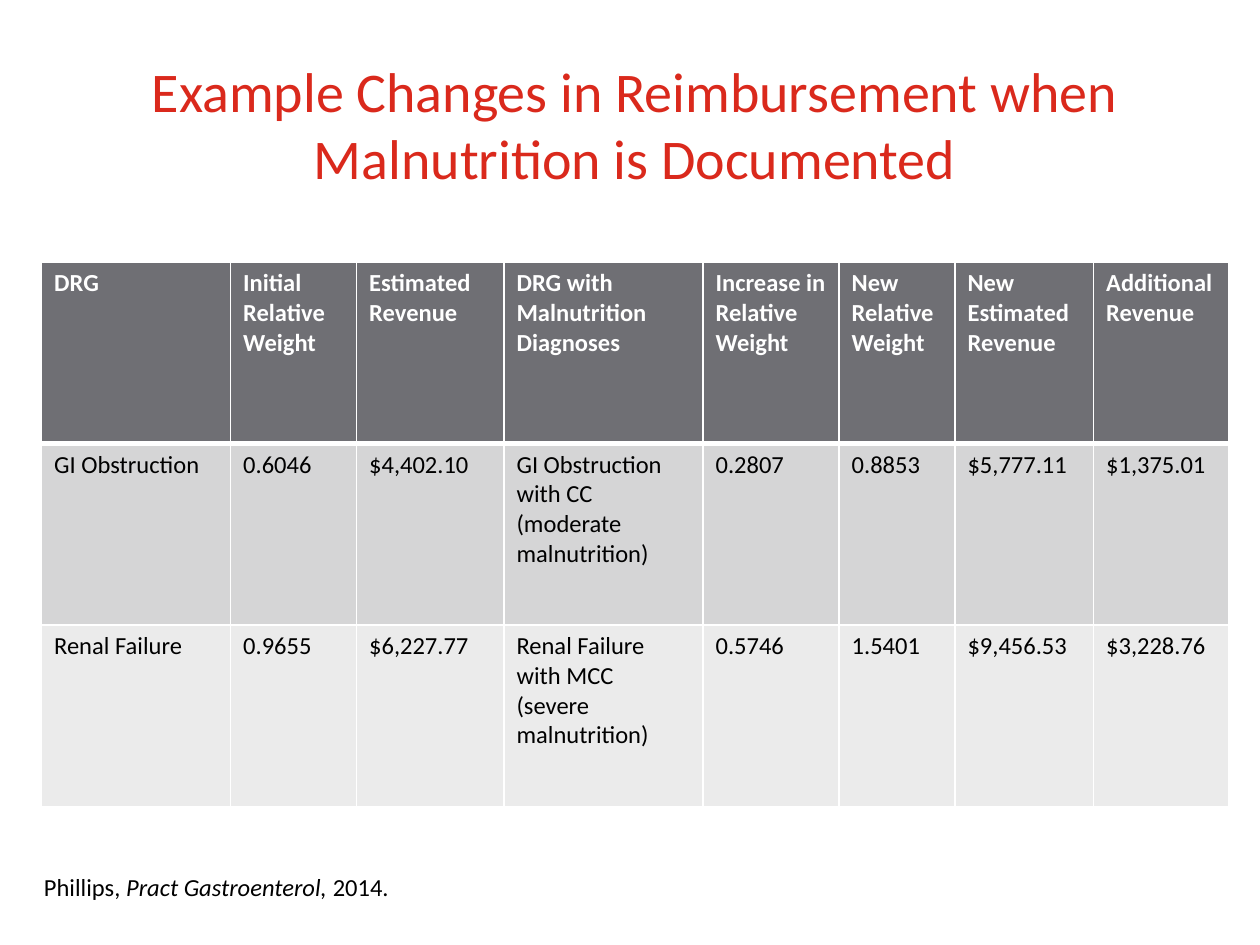
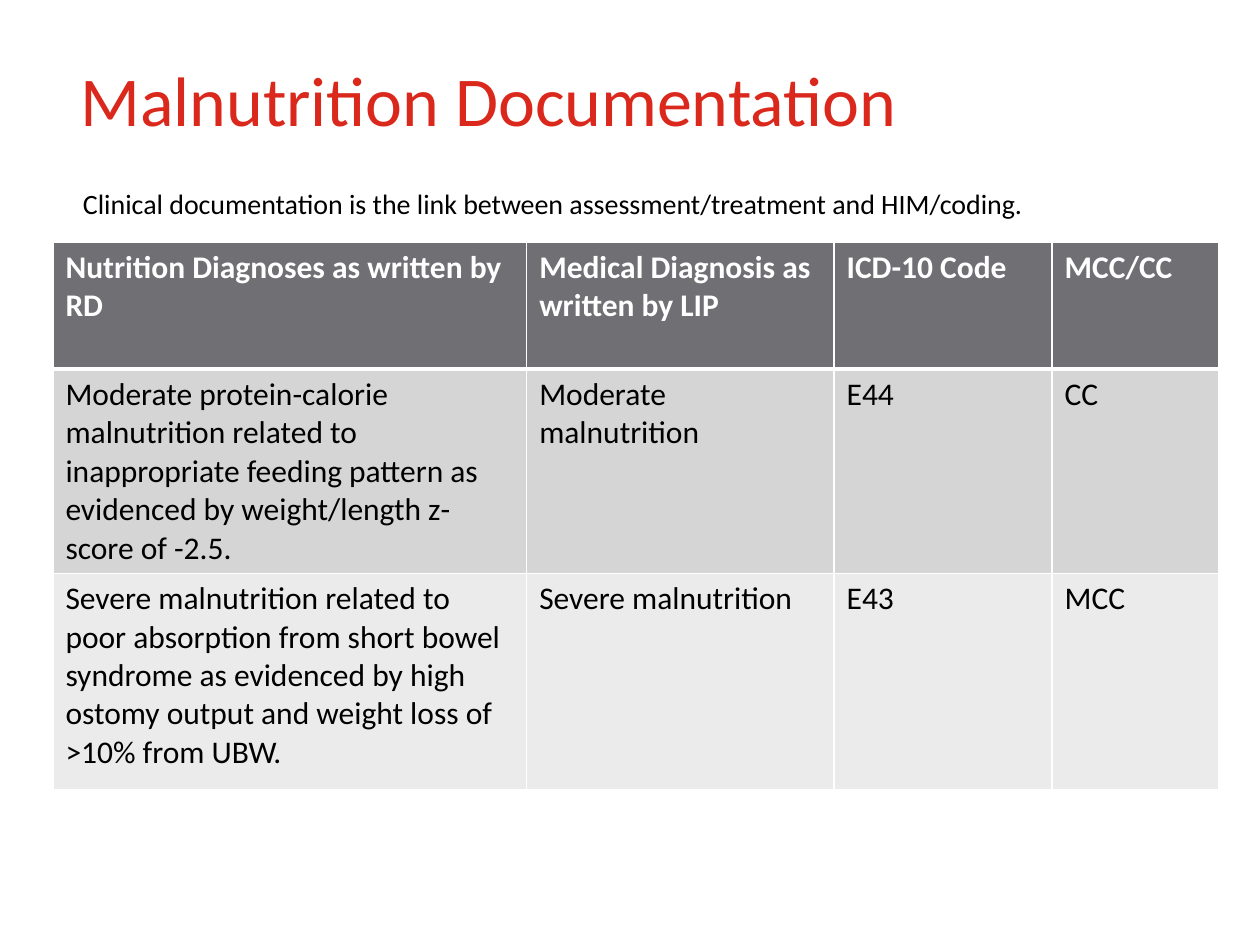
from dataclasses import dataclass

from lxml import etree
from pptx import Presentation
from pptx.dml.color import RGBColor
from pptx.enum import text as t
from pptx.oxml import ns
from pptx.util import Inches, Pt

FACE = "Calibri"
RED, WHITE, BLACK = "DA291C", "FFFFFF", "000000"
HEAD, BANDS = "6F6F74", ("D5D5D6", "EBEBEB")
LEFT, CENTER = t.PP_ALIGN.LEFT, t.PP_ALIGN.CENTER


@dataclass
class Box:
    left: float
    top: float
    width: float
    height: float


@dataclass
class Grid:
    box: Box
    size: int
    cols: list[float]
    rows: list[float]
    cells: list[list[str]]


TITLE = Box(0.54, 0.4, 9, 0.73)

REVENUE = Grid(
    Box(0.33, 2.08, 9.42, 4.33), 14,
    [1.5, 1, 1.17, 1.58, 1.08, 0.92, 1.1, 1.07], [1.44] * 3,
    [
        ["DRG", "Initial Relative Weight", "Estimated Revenue",
         "DRG with Malnutrition Diagnoses", "Increase in Relative Weight",
         "New Relative Weight", "New Estimated Revenue", "Additional Revenue"],
        ["GI Obstruction", "0.6046", "$4,402.10",
         "GI Obstruction with CC (moderate malnutrition)",
         "0.2807", "0.8853", "$5,777.11", "$1,375.01"],
        ["Renal Failure", "0.9655", "$6,227.77",
         "Renal Failure with MCC (severe malnutrition)",
         "0.5746", "1.5401", "$9,456.53", "$3,228.76"],
    ],
)

CODING = Grid(
    Box(0.42, 1.92, 9.25, 4.35), 18,
    [3.76, 2.44, 1.73, 1.32], [1.01, 1.62, 1.72],
    [
        ["Nutrition Diagnoses as written by RD",
         "Medical Diagnosis as written by LIP", "ICD-10 Code", "MCC/CC"],
        ["Moderate protein-calorie malnutrition related to inappropriate "
         "feeding pattern as evidenced by weight/length z-score of -2.5.",
         "Moderate malnutrition", "E44", "CC"],
        ["Severe malnutrition related to poor absorption from short bowel "
         "syndrome as evidenced by high ostomy output and weight loss of "
         ">10% from UBW.",
         "Severe malnutrition", "E43", "MCC"],
    ],
)


def place(box: Box) -> list[int]:
    return [Inches(n) for n in (box.left, box.top, box.width, box.height)]


def style(para, size: int, color: str, bold: bool = False) -> None:
    font = para.font
    font.name, font.size, font.bold = FACE, Pt(size), bold
    font.color.rgb = RGBColor.from_string(color)


def write(slide, box: Box, words: list[str], size: int, color: str = BLACK,
          align=LEFT, wrap: bool = True) -> None:
    frame = slide.shapes.add_textbox(*place(box)).text_frame
    frame.word_wrap = wrap
    para = frame.paragraphs[0]
    para.alignment = align
    style(para, size, color)
    for spot, word in enumerate(words):
        run = para.add_run()
        run.text = word
        if spot % 2:
            run.font.italic = True


def border(cell, top: int, base: int) -> None:
    props = cell._tc.get_or_add_tcPr()
    for side, width in zip("LRTB", (1, 1, top, base)):
        line = etree.SubElement(props, ns.qn(f"a:ln{side}"), w=str(Pt(width)))
        fill = etree.SubElement(line, ns.qn("a:solidFill"))
        etree.SubElement(fill, ns.qn("a:srgbClr"), val=WHITE)


def draw(slide, grid: Grid) -> None:
    table = slide.shapes.add_table(
        len(grid.rows), len(grid.cols), *place(grid.box)).table
    for col, width in zip(table.columns, grid.cols):
        col.width = Inches(width)
    for row, height in zip(table.rows, grid.rows):
        row.height = Inches(height)
    for r, line in enumerate(grid.cells):
        head = r == 0
        shade = HEAD if head else BANDS[(r - 1) % 2]
        for c, word in enumerate(line):
            cell = table.cell(r, c)
            cell.text = word
            style(cell.text_frame.paragraphs[0], grid.size,
                  WHITE if head else BLACK, head)
            border(cell, 3 if r == 1 else 1, 3 if head else 1)
            cell.fill.solid()
            cell.fill.fore_color.rgb = RGBColor.from_string(shade)


def main() -> None:
    deck = Presentation()
    deck.slide_width, deck.slide_height = Inches(10), Inches(7.5)
    blank = deck.slide_layouts[6]

    slide = deck.slides.add_slide(blank)
    write(slide, TITLE,
          ["Example Changes in Reimbursement when Malnutrition is Documented"],
          32, RED, CENTER)
    draw(slide, REVENUE)
    write(slide, Box(0.25, 6.87, 3.01, 0.34),
          ["Phillips, ", "Pract Gastroenterol, ", "2014."], 14, wrap=False)

    slide = deck.slides.add_slide(blank)
    write(slide, TITLE, ["Malnutrition Documentation"], 40, RED)
    write(slide, Box(0.56, 1.43, 8.99, 4.87),
          ["Clinical documentation is the link between "
           "assessment/treatment and HIM/coding."], 16)
    draw(slide, CODING)

    deck.save("out.pptx")


if __name__ == "__main__":
    main()
